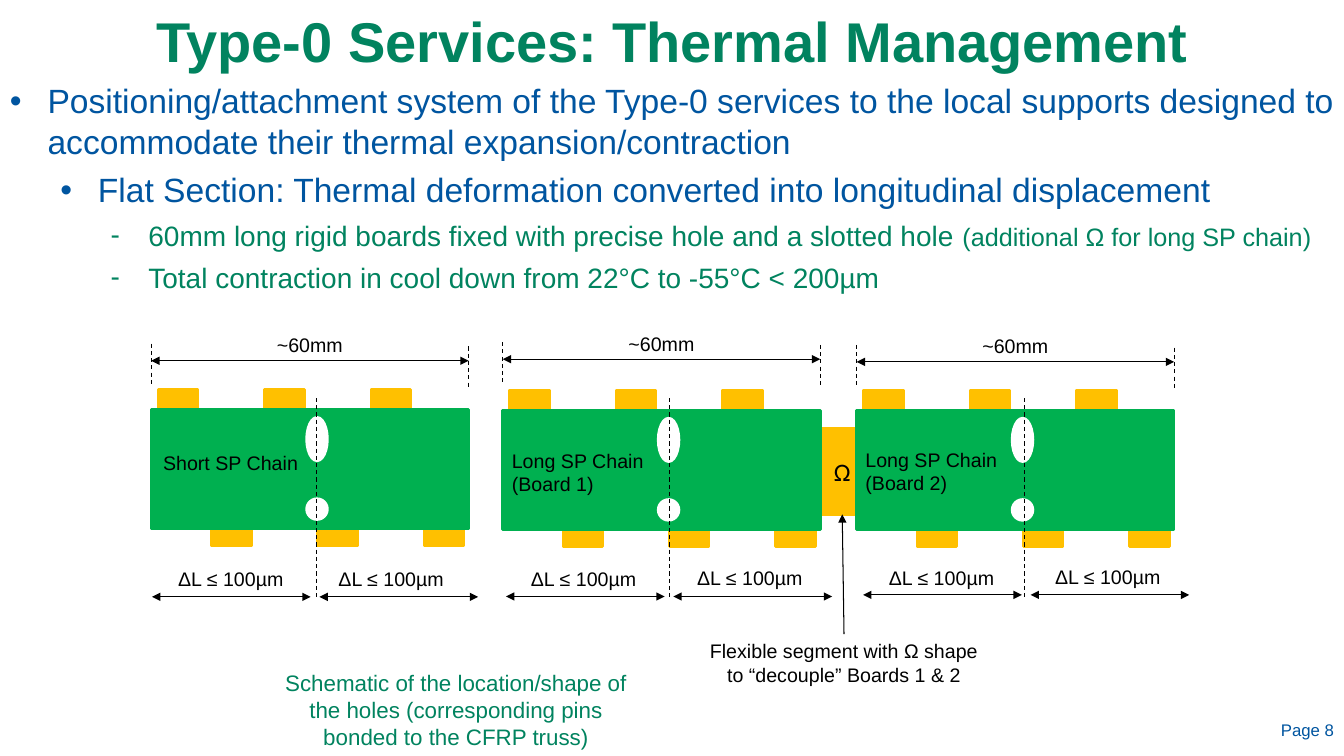
import pptx
import pptx.util
import pptx.dml.color
import pptx.enum.dml
import pptx.enum.shapes
import pptx.enum.text
import pptx.oxml
import pptx.oxml.ns
from lxml import etree

Cm = pptx.util.Cm
Pt = pptx.util.Pt
RGB = pptx.dml.color.RGBColor.from_string
SHAPE = pptx.enum.shapes.MSO_SHAPE
ALIGN = pptx.enum.text.PP_ALIGN
ANCHOR = pptx.enum.text.MSO_ANCHOR
qn = pptx.oxml.ns.qn

THEME = {
    "blue": "0055A0", "teal": "01835F", "board": "00B050", "gold": "FFC000",
    "white": "FFFFFF", "black": "000000",
    "title": 40, "lead": 24, "detail": 20, "aside": 18, "omega": 18,
    "caption": 16, "label": 14, "page": 12,
    "font": "Arial", "omega_font": "Calibri", "edge": 2, "thin": 0.75,
}

TITLE = "Type-0 Services: Thermal Management"
PAGE = "Page 8"
BULLETS = [
    (0, "•", "blue", [("Positioning/attachment system of the Type-0 services to the local supports designed to accommodate their thermal expansion/contraction", "lead")]),
    (1, "•", "blue", [("Flat Section: Thermal deformation converted into longitudinal displacement", "lead")]),
    (2, "-", "teal", [("60mm long rigid boards fixed with precise hole and a slotted hole ", "detail"),
                      ("(additional Ω for long SP chain)", "aside")]),
    (2, "-", "teal", [("Total contraction in cool down from 22°C to -55°C < 200µm", "detail")]),
]
BOARDS = [
    {"name": "Short SP Chain", "left": 3.81, "top": 10.33, "name_at": (3.86, 11.25), "axis": 7.98,
     "span_y": 9.09, "shift": (3.83, 15.04), "shift_labels": [(4.24, 14.17), (8.28, 14.15)]},
    {"name": "Long SP Chain (Board 1)", "left": 12.67, "top": 10.35, "name_at": (12.65, 11.18), "axis": 16.87,
     "span_y": 9.05, "shift": (12.75, 15.03), "shift_labels": [(13.13, 14.17), (17.32, 14.14)]},
    {"name": "Long SP Chain (Board 2)", "left": 21.59, "top": 10.35, "name_at": (21.56, 11.15), "axis": 25.83,
     "span_y": 9.12, "shift": (21.75, 14.99), "shift_labels": [(22.15, 14.14), (26.34, 14.12)]},
]
SPAN = "~60mm"
SHIFT = "ΔL ≤ 100µm"
OMEGA = "Ω"
OMEGA_NOTE = "Flexible segment with Ω shape to “decouple” Boards 1 & 2"
CAPTION = "Schematic of the location/shape of the holes (corresponding pins bonded to the CFRP truss)"

BOARD_W, BOARD_H = 8, 3
TAB_W, TAB_H, TAB_STEP, TAB_INSET = 1, 0.5, 1.34, 0.18
HOLE_X, HOLE_W = 3.92, 0.52
SHIFT_W, SHIFT_STEP = 4, 4.22
LABEL_W, LABEL_H = 4, 0.84

deck = pptx.Presentation()
deck.slide_width, deck.slide_height = Cm(33.87), Cm(19.05)
slide = deck.slides.add_slide(deck.slide_layouts[5])


def add_run(paragraph, words, size, colour, font="font", bold=False):
    run = paragraph.add_run()
    run.text = words
    for key, value in {"name": THEME[font], "size": Pt(THEME[size]), "bold": bold}.items():
        setattr(run.font, key, value)
    run.font.color.rgb = RGB(THEME[colour])


def write(holder, words, size, colour, align=ALIGN.LEFT, anchor=ANCHOR.TOP, **run_format):
    frame = holder.text_frame
    for key, value in {"word_wrap": True, "vertical_anchor": anchor}.items():
        setattr(frame, key, value)
    frame.paragraphs[0].alignment = align
    add_run(frame.paragraphs[0], words, size, colour, **run_format)


def note(words, left, top, width=LABEL_W, height=LABEL_H, size="label", colour="black", **layout):
    box = slide.shapes.add_textbox(Cm(left), Cm(top), Cm(width), Cm(height))
    write(box, words, size, colour, **layout)
    return box


def block(left, top, width, height, colour, kind=SHAPE.RECTANGLE):
    part = slide.shapes.add_shape(kind, Cm(left), Cm(top), Cm(width), Cm(height))
    part.shadow.inherit = False
    part.fill.solid()
    part.fill.fore_color.rgb = RGB(THEME[colour])
    part.line.color.rgb = RGB(THEME[colour])
    part.line.width = Pt(THEME["edge"])
    return part


def rule(x1, y1, x2, y2, dashed=False, heads=()):
    line = slide.shapes.add_connector(
        pptx.enum.shapes.MSO_CONNECTOR.STRAIGHT, Cm(x1), Cm(y1), Cm(x2), Cm(y2))
    line.line.color.rgb = RGB(THEME["black"])
    line.line.width = Pt(THEME["thin"])
    if dashed:
        line.line.dash_style = pptx.enum.dml.MSO_LINE.DASH
    properties = line._element.spPr
    for head in heads:
        etree.SubElement(properties.find(qn("a:ln")), qn(head), type="triangle")
    etree.SubElement(properties, qn("a:effectLst"))
    return line


def add_bullets():
    box = slide.shapes.add_textbox(Cm(0), Cm(1.9), Cm(33.87), Cm(5.64))
    frame = box.text_frame
    frame.word_wrap = True
    for index, (level, mark, colour, runs) in enumerate(BULLETS):
        paragraph = frame.add_paragraph() if index else frame.paragraphs[0]
        paragraph.level = level
        properties = paragraph._p.get_or_add_pPr()
        properties.set("marL", str(Cm(0.95 + 1.27 * level)))
        properties.set("indent", str(-Cm(0.95)))
        tint = etree.SubElement(properties, qn("a:buClr"))
        etree.SubElement(tint, qn("a:srgbClr"), val=THEME[colour])
        etree.SubElement(properties, qn("a:buFont"), typeface=THEME["font"])
        etree.SubElement(properties, qn("a:buChar"), char=mark)
        paragraph.space_before = Pt(6 if index else 0)
        for words, size in runs:
            add_run(paragraph, words, size, colour)


def add_board(board):
    left, top = board["left"], board["top"]
    for tab in range(6):
        tab_top = top + (2.93 if tab % 2 else -0.52)
        block(left + TAB_INSET + tab * TAB_STEP, tab_top, TAB_W, TAB_H, "gold")
    block(left, top, BOARD_W, BOARD_H, "board")
    for hole_top, hole_h in ((2.24, HOLE_W), (0.19, 1.09)):
        block(left + HOLE_X, top + hole_top, HOLE_W, hole_h, "white", SHAPE.OVAL)
    rule(board["axis"], 10.03, board["axis"], 15.04, dashed=True)
    note(board["name"], *board["name_at"], height=1.42 if "Board" in board["name"] else LABEL_H)

    both = ("a:headEnd", "a:tailEnd")
    span_y = board["span_y"]
    rule(left, span_y, left + BOARD_W, span_y, heads=both)
    note(SPAN, left + (BOARD_W - LABEL_W) / 2, span_y - 0.82, align=ALIGN.CENTER)
    for tick_x, tick_top in ((left, span_y - 0.43), (left + BOARD_W, span_y - 0.36)):
        rule(tick_x, tick_top, tick_x, tick_top + 1.01, dashed=True)

    shift_left, shift_y = board["shift"]
    for side, label_at in enumerate(board["shift_labels"]):
        start = shift_left + side * SHIFT_STEP
        rule(start, shift_y, start + SHIFT_W, shift_y, heads=both)
        note(SHIFT, *label_at)


heading = slide.shapes.title
for edge, value in {"left": 0, "top": 0, "width": 33.87, "height": 2}.items():
    setattr(heading, edge, Cm(value))
write(heading, TITLE, "title", "teal", align=ALIGN.CENTER, anchor=ANCHOR.MIDDLE, bold=True)

add_bullets()
omega = block(20.5, 10.8, 1.45, 2.16, "gold")
write(omega, OMEGA, "omega", "black", align=ALIGN.CENTER, anchor=ANCHOR.MIDDLE, font="omega_font")
note(PAGE, 30.9, 17.73, 2.97, 1.32, "page", "blue", align=ALIGN.RIGHT, anchor=ANCHOR.MIDDLE)
for chain in BOARDS:
    add_board(chain)

omega_note = note(OMEGA_NOTE, 17.37, 15.98, 7.8, 1.42, align=ALIGN.CENTER)
leader = rule(21.27, 15.98, 21.22, 12.96, heads=("a:tailEnd",))
leader.begin_connect(omega_note, 0)
leader.end_connect(omega, 2)
note(CAPTION, 6.88, 16.74, 9.22, 2.29, "caption", "teal", align=ALIGN.CENTER)

deck.save("out.pptx")
